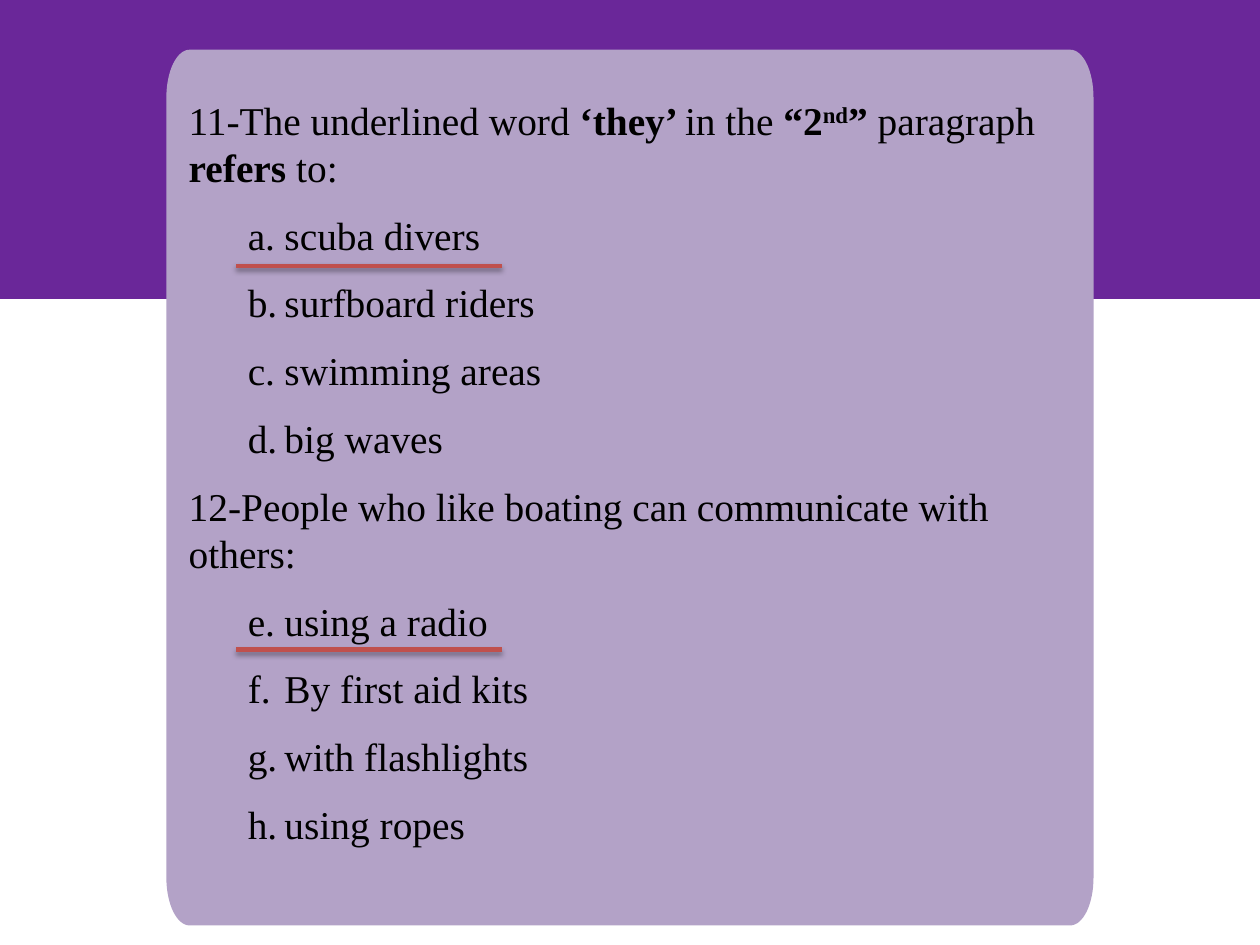
from dataclasses import dataclass
from math import cos, pi, sin

from lxml import etree
from pptx import Presentation
from pptx.dml.color import RGBColor
from pptx.enum import shapes, text
from pptx.oxml import ns
from pptx.util import Cm, Emu, Pt


@dataclass(frozen=True)
class Theme:
    band: RGBColor = RGBColor(0x6A, 0x27, 0x99)
    card: RGBColor = RGBColor(0xB3, 0xA2, 0xC7)
    mark: RGBColor = RGBColor(0xC0, 0x50, 0x4D)
    ink: RGBColor = RGBColor(0, 0, 0)
    font: str = "Times New Roman"
    size: Pt = Pt(24)
    line_pitch: Pt = Pt(28.9)
    gap: Pt = Pt(12.35)
    mark_width: Pt = Pt(3)


@dataclass(frozen=True)
class Run:
    words: str
    bold: bool = False
    raised: bool = False


@dataclass(frozen=True)
class Question:
    stem: list[Run]
    answers: list[str]
    first_letter: int  # 1 stands for a
    mark_y: float  # height of the line under the right answer, cm


THEME = Theme()
SLIDE_W, SLIDE_H = 27.1, 20.32

QUESTIONS = [
    Question(
        [Run("11-The underlined word "), Run("‘they’ ", bold=True), Run("in the "),
         Run("“2", bold=True), Run("nd", bold=True, raised=True), Run("” ", bold=True),
         Run("paragraph "), Run("refers ", bold=True), Run("to:")],
        ["scuba divers", "surfboard riders", "swimming areas", "big waves"], 1, 5.72),
    Question(
        [Run("12-People who like boating can communicate with others:")],
        ["using a radio", "By first aid kits", "with flashlights", "using ropes"], 5, 13.97),
]


def paint(shape, color: RGBColor) -> None:
    shape.shadow.inherit = False
    shape.fill.solid()
    shape.fill.fore_color.rgb = color
    shape.line.fill.background()


def draw_card(slide, left: float, top: float, width: float, height: float,
              rx: float, ry: float, steps: int = 16) -> None:
    """Draw a card whose corners are quarter ellipses."""
    right, bottom = left + width, top + height
    centres = [(right - rx, bottom - ry), (left + rx, bottom - ry),
               (left + rx, top + ry), (right - rx, top + ry)]
    outline = []
    for quarter, (cx, cy) in enumerate(centres):
        for step in range(steps + 1):
            angle = (quarter + step / steps) * pi / 2
            outline.append((Cm(cx + rx * cos(angle)), Cm(cy + ry * sin(angle))))
    builder = slide.shapes.build_freeform(*outline[0])
    builder.add_line_segments(outline[1:], close=True)
    paint(builder.convert_to_shape(), THEME.card)


def add_paragraph(frame, runs: list[Run]):
    first = not frame.paragraphs[0].runs
    paragraph = frame.paragraphs[0] if first else frame.add_paragraph()
    formats = {"space_before": THEME.gap, "line_spacing": THEME.line_pitch,
               "alignment": text.PP_ALIGN.LEFT}
    for name, value in formats.items():
        setattr(paragraph, name, value)
    for part in runs:
        run = paragraph.add_run()
        run.text = part.words
        for name, value in {"name": THEME.font, "size": THEME.size, "bold": part.bold}.items():
            setattr(run.font, name, value)
        run.font.color.rgb = THEME.ink
        if part.raised:
            run.font._element.set("baseline", "30000")
    return paragraph


def add_answer(frame, words: str, first_letter: int) -> None:
    paragraph = add_paragraph(frame, [Run(words)])
    paragraph.level = 1
    props = paragraph._p.get_or_add_pPr()
    props.set("marL", str(Cm(2.06)))
    props.set("indent", str(Cm(-0.79)))
    etree.SubElement(props, ns.qn("a:buFont"), typeface=THEME.font)
    etree.SubElement(props, ns.qn("a:buAutoNum"), type="alphaLcPeriod",
                     startAt=str(first_letter))


def draw_mark(slide, y: float) -> None:
    """Underline a right answer with a softly shadowed line."""
    mark = slide.shapes.add_connector(shapes.MSO_CONNECTOR.STRAIGHT,
                                      Cm(5.08), Cm(y), Cm(10.8), Cm(y))
    mark.line.color.rgb = THEME.mark
    mark.line.width = THEME.mark_width
    effects = etree.SubElement(mark._element.spPr, ns.qn("a:effectLst"))
    shadow = etree.SubElement(effects, ns.qn("a:outerShdw"), blurRad=str(Pt(3.1)),
                              dist=str(Pt(1.8)), dir="5400000", rotWithShape="0")
    shade = etree.SubElement(shadow, ns.qn("a:srgbClr"), val=str(THEME.ink))
    etree.SubElement(shade, ns.qn("a:alpha"), val="35000")


def main() -> None:
    deck = Presentation()
    deck.slide_width, deck.slide_height = Cm(SLIDE_W), Cm(SLIDE_H)
    slide = deck.slides.add_slide(deck.slide_layouts[6])

    # Background band and card
    band = slide.shapes.add_shape(shapes.MSO_SHAPE.RECTANGLE,
                                  Emu(0), Emu(0), Cm(SLIDE_W), Cm(6.43))
    paint(band, THEME.band)
    draw_card(slide, 3.58, 1.07, 19.94, 18.83, rx=0.5, ry=1.02)

    # Questions and answers
    quiz = slide.shapes.add_textbox(Cm(3.81), Cm(1.93), Cm(19.94), Cm(16.46)).text_frame
    quiz.word_wrap = True
    for question in QUESTIONS:
        add_paragraph(quiz, question.stem)
        for answer in question.answers:
            add_answer(quiz, answer, question.first_letter)

    # Lines under the right answers
    for question in QUESTIONS:
        draw_mark(slide, question.mark_y)

    deck.save("out.pptx")


if __name__ == "__main__":
    main()
